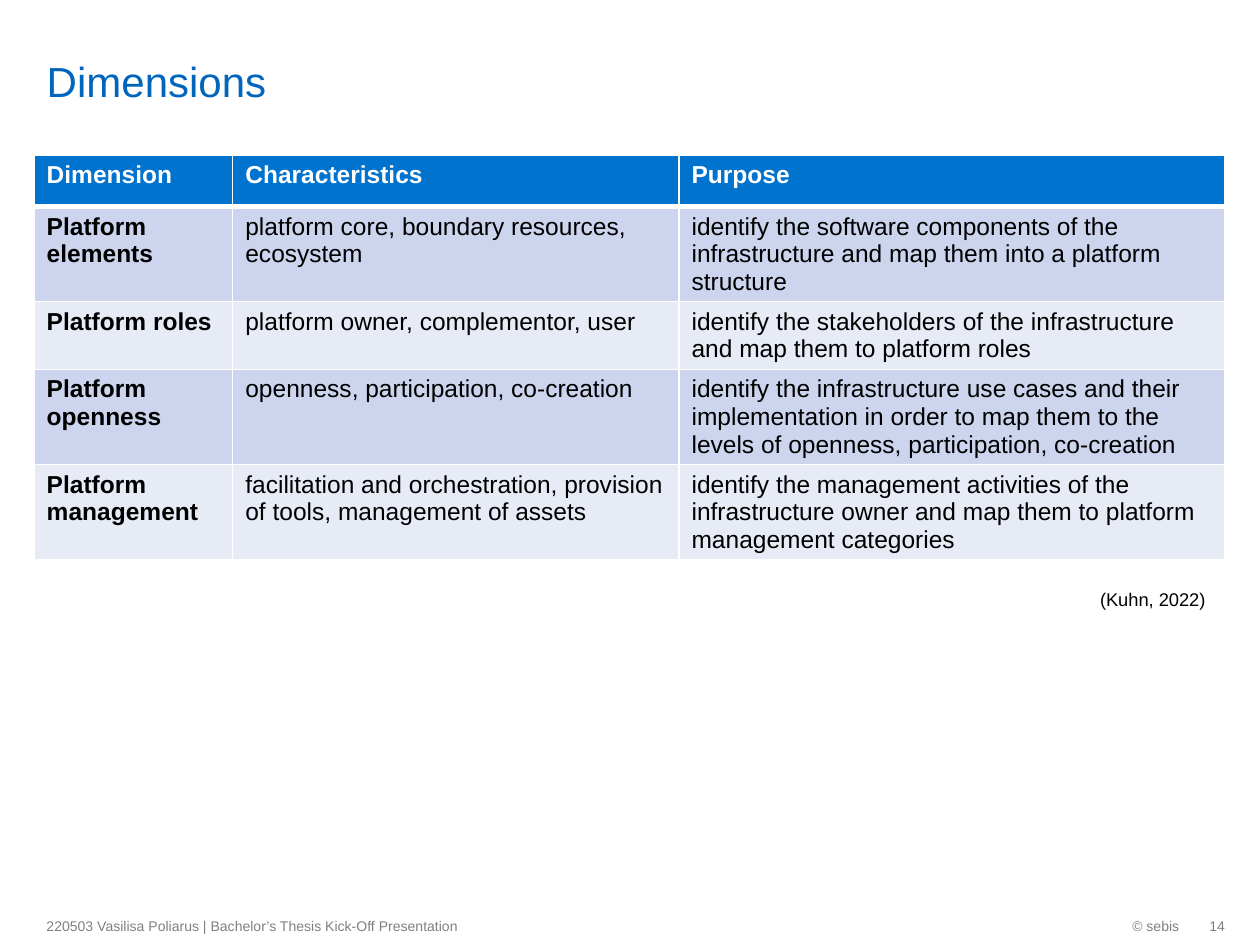
from lxml import etree
from pptx import Presentation
from pptx.dml.color import RGBColor
from pptx.enum.text import MSO_ANCHOR, MSO_AUTO_SIZE, PP_ALIGN
from pptx.oxml.ns import qn
from pptx.util import Pt

LEFT, RIGHT = PP_ALIGN.LEFT, PP_ALIGN.RIGHT
TOP, MIDDLE, BOTTOM = MSO_ANCHOR.TOP, MSO_ANCHOR.MIDDLE, MSO_ANCHOR.BOTTOM
NO_AUTOFIT = MSO_AUTO_SIZE.NONE

TITLE = "Dimensions"
ROWS = [
    ("Dimension", "Characteristics", "Purpose"),
    ("Platform elements", "platform core, boundary resources, ecosystem",
     "identify the software components of the infrastructure and map them into a platform structure"),
    ("Platform roles", "platform owner, complementor, user",
     "identify the stakeholders of the infrastructure and map them to platform roles"),
    ("Platform openness", "openness, participation, co-creation",
     "identify the infrastructure use cases and their implementation in order to map them "
     "to the levels of openness, participation, co-creation"),
    ("Platform management", "facilitation and orchestration, provision of tools, management of assets",
     "identify the management activities of the infrastructure owner and map them to platform "
     "management categories"),
]
COLUMN_WIDTHS = (113.5, 255, 312)
ROW_HEIGHTS = (29.5, 54.3, 38.6, 54.3, 54.3)
HEADER_FILL, BODY_FILLS = "0073CF", ("CCD5ED", "E7EBF6")
MARGIN, TABLE_TOP, FOOTER_TOP, FOOTER_HEIGHT = 19.5, 88.5, 517.5, 23
FOOTER = {"size": 8, "color": "808080", "anchor": MIDDLE}
TEXT_BOXES = [
    ("© sebis", (554.5, FOOTER_TOP, 126.5, FOOTER_HEIGHT), {**FOOTER, "align": RIGHT, "wrap": False}),
    ("14", (680.5, FOOTER_TOP, 19.5, FOOTER_HEIGHT),
     {**FOOTER, "align": RIGHT, "wrap": False, "insets": (7.2, 3.6, 0, 3.6)}),
    ("220503 Vasilisa Poliarus | Bachelor’s Thesis Kick-Off Presentation",
     (MARGIN, FOOTER_TOP, 340.5, FOOTER_HEIGHT), FOOTER),
    ("(Kuhn, 2022)", (621.5, 332.5, 78.5, 21), {"size": 10.5, "wrap": False}),
]


def rgb(value):
    """Turn a hex string into a colour."""
    return RGBColor.from_string(value)


def write(frame, text, size=14, color="000000", bold=False, align=LEFT,
          anchor=TOP, wrap=True, insets=(7.2, 3.6, 7.2, 3.6)):
    """Put formatted text into a text frame."""
    frame.auto_size = NO_AUTOFIT
    frame.word_wrap = wrap
    frame.vertical_anchor = anchor
    frame.margin_left, frame.margin_top, frame.margin_right, frame.margin_bottom = map(Pt, insets)
    format_paragraph(frame, text, size, color, bold, align)


def format_paragraph(frame, text, size, color, bold, align):
    """Fill the first paragraph of a frame and set its font."""
    paragraph = frame.paragraphs[0]
    paragraph.alignment = align
    run = paragraph.add_run()
    run.text = text
    run.font.name, run.font.size, run.font.bold = "Arial", Pt(size), bold
    run.font.color.rgb = rgb(color)


def place(shape, box):
    """Move and size a shape."""
    shape.left, shape.top, shape.width, shape.height = map(Pt, box)


def set_borders(cell, top, bottom):
    """Draw white cell borders, with the top and bottom widths in points."""
    properties = cell._tc.get_or_add_tcPr()
    widths = (("a:lnL", 1), ("a:lnR", 1), ("a:lnT", top), ("a:lnB", bottom))
    for index, (tag, width) in enumerate(widths):
        line = etree.Element(qn(tag), w=str(Pt(width)))
        fill = etree.SubElement(line, qn("a:solidFill"))
        etree.SubElement(fill, qn("a:srgbClr"), val="FFFFFF")
        properties.insert(index, line)


def add_dimension_table(slide):
    """Add the table of dimensions."""
    table = slide.shapes.add_table(
        len(ROWS), len(COLUMN_WIDTHS), Pt(MARGIN), Pt(TABLE_TOP),
        Pt(sum(COLUMN_WIDTHS)), Pt(sum(ROW_HEIGHTS))).table
    for column, width in zip(table.columns, COLUMN_WIDTHS):
        column.width = Pt(width)
    for row_index, texts in enumerate(ROWS):
        table.rows[row_index].height = Pt(ROW_HEIGHTS[row_index])
        header = row_index == 0
        for column_index, text in enumerate(texts):
            cell = table.cell(row_index, column_index)
            format_paragraph(cell.text_frame, text, 14, "FFFFFF" if header else "000000",
                             header or column_index == 0, LEFT)
            cell.fill.solid()
            cell.fill.fore_color.rgb = rgb(HEADER_FILL if header else BODY_FILLS[(row_index - 1) % 2])
            set_borders(cell, top=3 if row_index == 1 else 1, bottom=3 if header else 1)


def main():
    """Build the slide and save it."""
    presentation = Presentation()
    presentation.slide_width, presentation.slide_height = Pt(720), Pt(540)
    slide = presentation.slides.add_slide(presentation.slide_layouts[5])
    add_dimension_table(slide)
    title = slide.shapes.title
    place(title, (MARGIN, 3.5, 593.5, 57))
    write(title.text_frame, TITLE, size=24, color="0065BD", anchor=BOTTOM, insets=(7.2, 0, 7.2, 0))
    for text, box, style in TEXT_BOXES:
        shape = slide.shapes.add_textbox(*map(Pt, box))
        write(shape.text_frame, text, **style)
    presentation.save("out.pptx")


if __name__ == "__main__":
    main()
